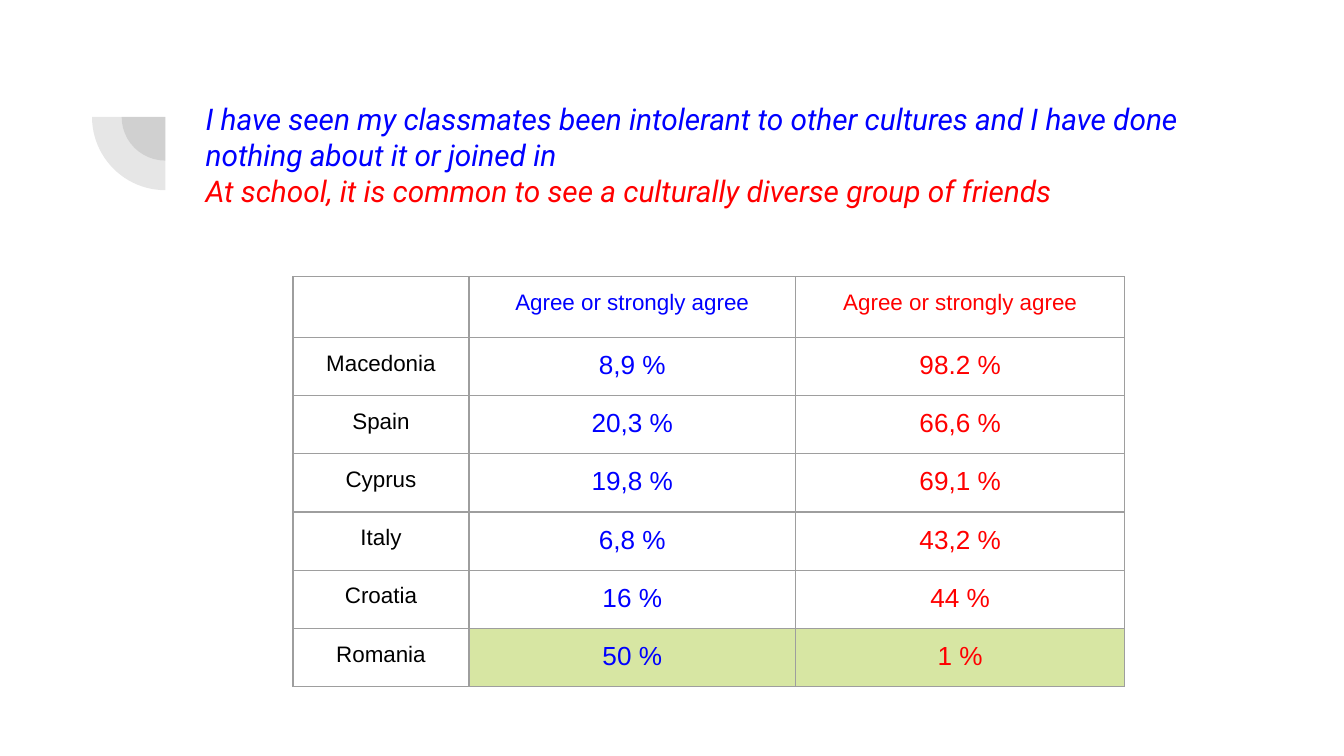
from dataclasses import dataclass

from lxml.etree import SubElement as Sub
from pptx import Presentation
from pptx.dml.color import RGBColor as RGB
from pptx.enum.shapes import MSO_SHAPE as Kind
from pptx.enum.text import MSO_ANCHOR as Anchor, MSO_AUTO_SIZE as Fit, PP_ALIGN as Align
from pptx.oxml.ns import qn
from pptx.util import Inches, Pt

HUES = {"blue": "0000FF", "red": "FF0000", "black": "000000",
        "gray": "424242", "line": "9E9E9E", "green": "D7E6A3"}
PAD = Inches(0.1)
MID = (1.23, 0.87)
WIDTHS = (1.31, 2.43, 2.45)
TALL, HEAD = 3.05, 0.45


@dataclass
class Row:
    name: str
    blue: str
    red: str
    size: int = 14
    fill: str | None = None


ROWS = [
    Row("", "Agree or strongly agree", "Agree or strongly agree", 12),
    Row("Macedonia", "8,9 %", "98.2 %", fill="white"),
    Row("Spain", "20,3 %", "66,6 %"),
    Row("Cyprus", "19,8 %", "69,1 %"),
    Row("Italy", "6,8 %", "43,2 %"),
    Row("Croatia", "16 %", "44 %", fill="white"),
    Row("Romania", "50 %", "1 %", fill="green"),
]
HUES["white"] = "FFFFFF"


def write(para, text: str, *, hue: str, size: int, font: str = "Arial",
          italic: bool = False, align=Align.LEFT) -> None:
    para.alignment = align
    if not text:
        Sub(para._p, qn("a:endParaRPr"), sz=str(size * 100))
        return
    run = para.add_run()
    run.text = text
    face = run.font
    face.name, face.size = font, Pt(size)
    face.bold, face.italic = False, italic
    face.color.rgb = RGB.from_string(HUES[hue])


def add_arc(slide, size: float) -> None:
    """Add a pale quarter disc around the shared centre."""
    left, top = (Inches(mid - size / 2) for mid in MID)
    pie = slide.shapes.add_shape(Kind.PIE, left, top, Inches(size), Inches(size))
    pie.adjustments[0], pie.adjustments[1] = 108, 162
    pie.rotation = 270
    pie.shadow.inherit = False
    pie.line.fill.background()
    pie.fill.solid()
    pie.fill.fore_color.rgb = RGB.from_string(HUES["gray"])
    tone = pie._element.spPr.find(f"{qn('a:solidFill')}/{qn('a:srgbClr')}")
    Sub(tone, qn("a:alpha"), val="13000")


def set_title(slide) -> None:
    title = slide.shapes.title
    title.left, title.top = Inches(1.43), Inches(0.65)
    title.width, title.height = Inches(7.69), Inches(1.09)
    frame = title.text_frame
    frame.word_wrap, frame.auto_size = True, Fit.NONE
    frame.vertical_anchor = Anchor.TOP
    frame.margin_left = frame.margin_right = PAD
    frame.margin_top = frame.margin_bottom = PAD
    look = {"size": 16, "font": "Roboto", "italic": True}
    write(frame.paragraphs[0], "I have seen my classmates been intolerant to other cultures "
          "and I have done nothing about it or joined in", hue="blue", **look)
    write(frame.add_paragraph(), "At school, it is common to see a culturally diverse "
          "group of friends", hue="red", **look)


def add_edges(cell) -> None:
    props = cell._tc.get_or_add_tcPr()
    for side in "LRTB":
        edge = Sub(props, qn(f"a:ln{side}"), w=str(Pt(0.75)))
        Sub(Sub(edge, qn("a:solidFill")), qn("a:srgbClr"), val=HUES["line"])


def fill_cell(cell, text: str, hue: str, size: int, fill: str | None) -> None:
    cell.margin_left = cell.margin_right = PAD
    cell.margin_top = cell.margin_bottom = PAD
    add_edges(cell)
    if fill:
        cell.fill.solid()
        cell.fill.fore_color.rgb = RGB.from_string(HUES[fill])
    else:
        cell.fill.background()
    write(cell.text_frame.paragraphs[0], text, hue=hue, size=size, align=Align.CENTER)


def add_grid(slide, rows: list[Row]) -> None:
    step = (TALL - HEAD) / (len(rows) - 1)
    grid = slide.shapes.add_table(len(rows), len(WIDTHS), Inches(2.18), Inches(2.06),
                                  Inches(sum(WIDTHS)), Inches(TALL)).table
    grid.first_row = grid.horz_banding = False
    for col, wide in zip(grid.columns, WIDTHS):
        col.width = Inches(wide)
    for i, row in enumerate(rows):
        grid.rows[i].height = Inches(step if i else HEAD)
        fill_cell(grid.cell(i, 0), row.name, "black", 12, None)
        fill_cell(grid.cell(i, 1), row.blue, "blue", row.size, row.fill)
        fill_cell(grid.cell(i, 2), row.red, "red", row.size, row.fill)


def main() -> None:
    deck = Presentation()
    deck.slide_width = Inches(10)
    deck.slide_height = deck.slide_width * 9 // 16
    slide = deck.slides.add_slide(deck.slide_layouts[5])
    for size in (0.65, 1.09):
        add_arc(slide, size)
    set_title(slide)
    add_grid(slide, ROWS)
    deck.save("out.pptx")


if __name__ == "__main__":
    main()
